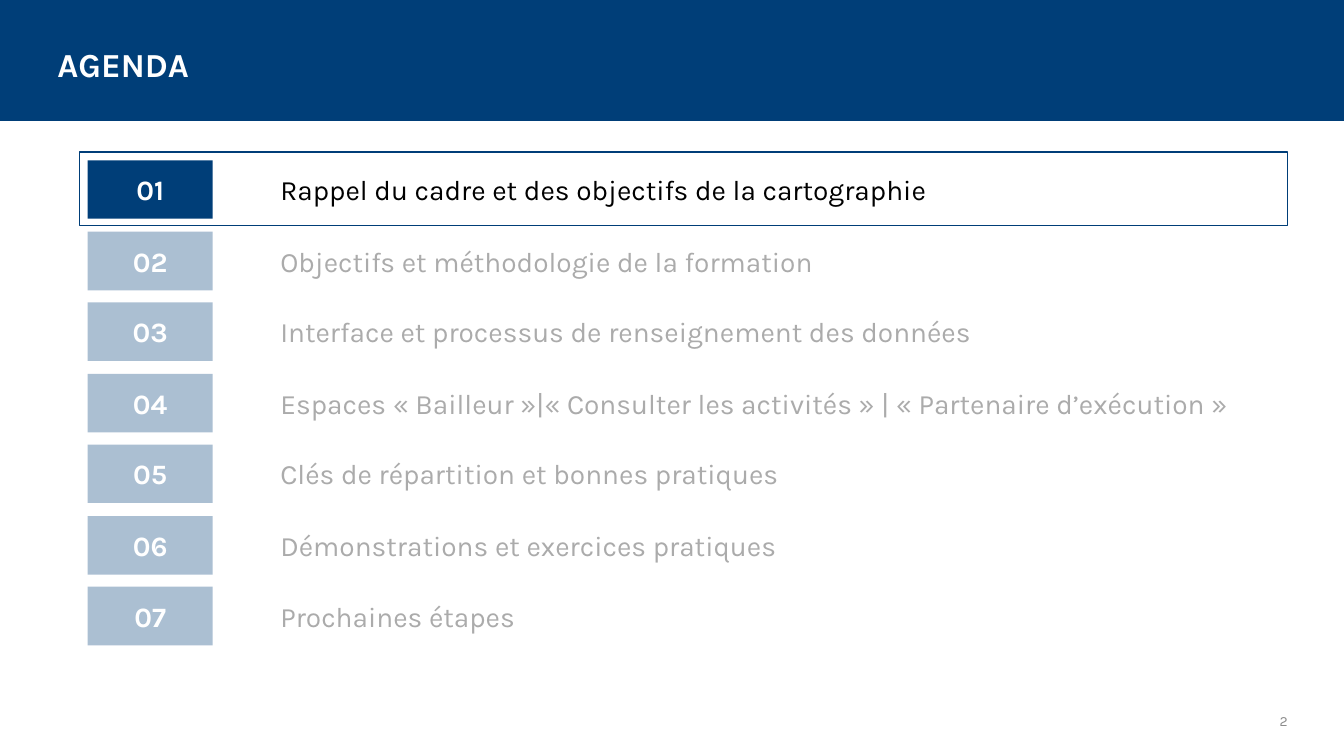
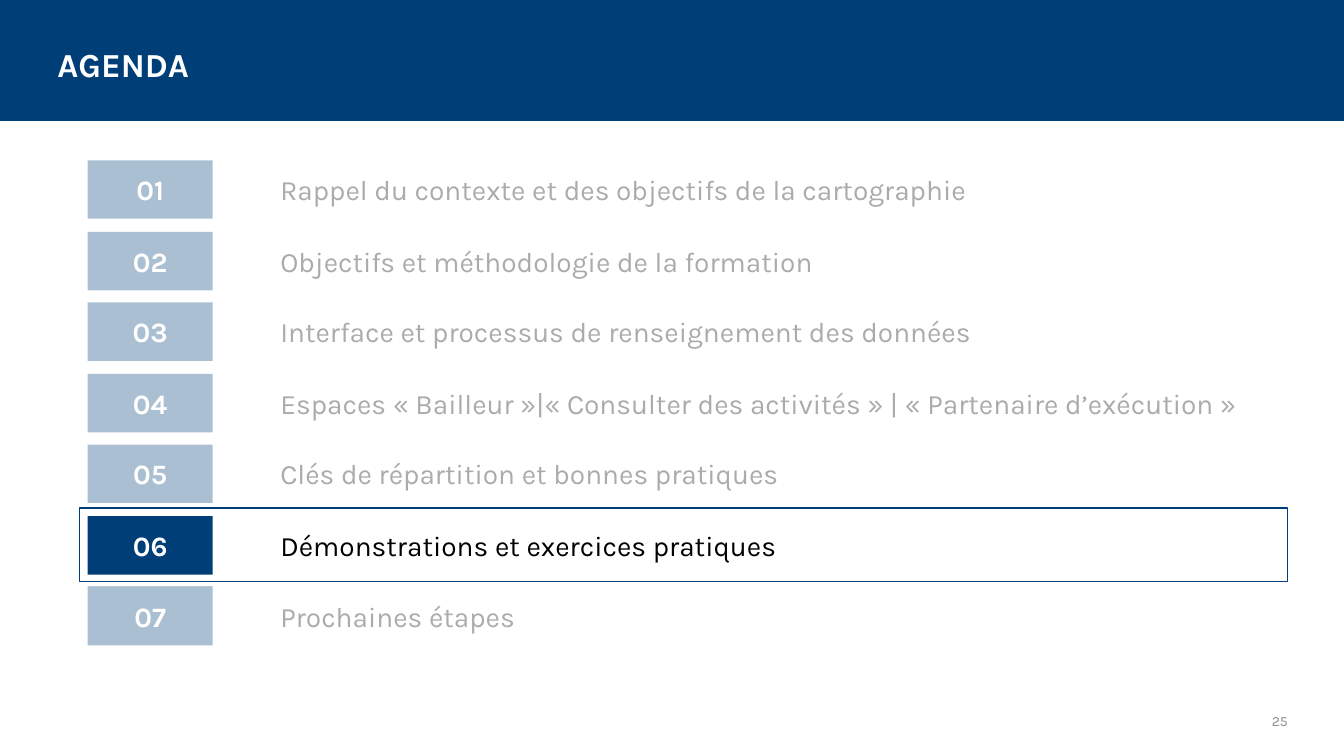
from dataclasses import dataclass

from lxml.etree import SubElement
from pptx import Presentation
from pptx.dml.color import RGBColor
from pptx.enum.shapes import MSO_SHAPE
from pptx.enum.text import MSO_ANCHOR, PP_ALIGN
from pptx.oxml.ns import qn
from pptx.util import Emu, Pt


@dataclass(frozen=True)
class Theme:
    navy: str = "003E78"
    white: str = "FFFFFF"
    black: str = "000000"
    grey: str = "8C8C8C"
    font: str = "Karla"
    title_size: int = 24
    body_size: int = 20
    footer_size: int = 10


THEME = Theme()
EMU_PER_PX = 9144
SLIDE_WIDTH, SLIDE_HEIGHT = 1333, 750
BAND_HEIGHT = 120
FIRST_ROW_TOP, ROW_HEIGHT = 159, 58
TWO_ROW_PITCH = 141
NUMBER_LEFT, NUMBER_WIDTH = 87, 124
TOPIC_LEFT, TOPIC_WIDTH = 278, 961
FRAME_LEFT, FRAME_WIDTH = 79, 1198
FRAME_HEIGHT, FRAME_OVERHANG = 73, 8
TOPIC_OPACITY, VEIL_OPACITY = 41, 67

SHARED_TOPICS = (
    "Objectifs et méthodologie de la formation",
    "Interface et processus de renseignement des données",
)
CLOSING_TOPICS = (
    "Clés de répartition et bonnes pratiques",
    "Démonstrations et exercices pratiques",
    "Prochaines étapes",
)


def px(*lengths):
    return [Emu(length * EMU_PER_PX) for length in lengths]


def row_top(index):
    return FIRST_ROW_TOP + (index * TWO_ROW_PITCH + 1) // 2


def agenda_topics(opening, spaces):
    return (opening, *SHARED_TOPICS, spaces, *CLOSING_TOPICS)


def add_box(shapes, bounds, fill=None, opacity=100, outline=None):
    box = shapes.add_shape(MSO_SHAPE.RECTANGLE, *px(*bounds))
    box.shadow.inherit = False
    if fill:
        box.fill.solid()
        box.fill.fore_color.rgb = RGBColor.from_string(fill)
        if opacity < 100:
            color = box.fill._xPr.find(qn("a:solidFill"))[0]
            SubElement(color, qn("a:alpha")).set("val", str(opacity * 1000))
    else:
        box.fill.background()
    if outline:
        box.line.color.rgb = RGBColor.from_string(outline)
        box.line.width = Pt(1)
    else:
        box.line.fill.background()
    return box


def write(holder, text, size, color, bold=False, align=PP_ALIGN.LEFT,
          insets=(0, 0), spacing=(0, 0)):
    frame = holder.text_frame
    frame.word_wrap = True
    frame.vertical_anchor = MSO_ANCHOR.MIDDLE
    side, edge = px(*insets)
    frame.margin_left = frame.margin_right = side
    frame.margin_top = frame.margin_bottom = edge
    paragraph = frame.paragraphs[0]
    paragraph.alignment = align
    paragraph.space_before, paragraph.space_after = map(Pt, spacing)
    run = paragraph.add_run()
    run.text = text
    run.font.name = THEME.font
    run.font.size = Pt(size)
    run.font.bold = bold
    run.font.color.rgb = RGBColor.from_string(color)


def add_base(slide, title, page):
    add_box(slide.shapes, (0, 0, SLIDE_WIDTH, BAND_HEIGHT), THEME.navy)
    footer = slide.shapes.add_textbox(*px(987, 695, 300, 40))
    write(footer, page, THEME.footer_size, THEME.grey,
          align=PP_ALIGN.RIGHT, insets=(10, 5))
    heading = slide.shapes.add_textbox(*px(47, 19, 1240, 90))
    write(heading, title, THEME.title_size, THEME.white, bold=True,
          insets=(10, 0))


def add_row(slide, index, topic):
    row = slide.shapes.add_group_shape().shapes
    top = row_top(index)
    number = add_box(row, (NUMBER_LEFT, top, NUMBER_WIDTH, ROW_HEIGHT),
                     THEME.navy)
    write(number, f"{index + 1:02}", THEME.body_size, THEME.white, bold=True,
          align=PP_ALIGN.CENTER, insets=(10, 10), spacing=(4, 8))
    label = add_box(row, (TOPIC_LEFT, top, TOPIC_WIDTH, ROW_HEIGHT),
                    THEME.white, TOPIC_OPACITY)
    write(label, topic, THEME.body_size, THEME.black, spacing=(4, 4))


def add_veil(slide, first, last):
    if first <= last:
        top = row_top(first)
        height = row_top(last) + ROW_HEIGHT - top
        add_box(slide.shapes, (FRAME_LEFT, top, FRAME_WIDTH, height),
                THEME.white, VEIL_OPACITY)


def add_agenda(presentation, page, topics, active):
    slide = presentation.slides.add_slide(presentation.slide_layouts[6])
    add_base(slide, "AGENDA", page)
    add_box(slide.shapes,
            (FRAME_LEFT, row_top(active) - FRAME_OVERHANG,
             FRAME_WIDTH, FRAME_HEIGHT), outline=THEME.navy)
    for index, topic in enumerate(topics):
        add_row(slide, index, topic)
    add_veil(slide, 0, active - 1)
    add_veil(slide, active + 1, len(topics) - 1)


def main():
    presentation = Presentation()
    presentation.slide_width, presentation.slide_height = px(
        SLIDE_WIDTH, SLIDE_HEIGHT)
    add_agenda(presentation, "2", agenda_topics(
        "Rappel du cadre et des objectifs de la cartographie",
        "Espaces « Bailleur »|« Consulter les activités » | « Partenaire d’exécution »",
    ), active=0)
    add_agenda(presentation, "25", agenda_topics(
        "Rappel du contexte et des objectifs de la cartographie",
        "Espaces « Bailleur »|« Consulter des activités » | « Partenaire d’exécution »",
    ), active=5)
    presentation.save("out.pptx")


if __name__ == "__main__":
    main()
